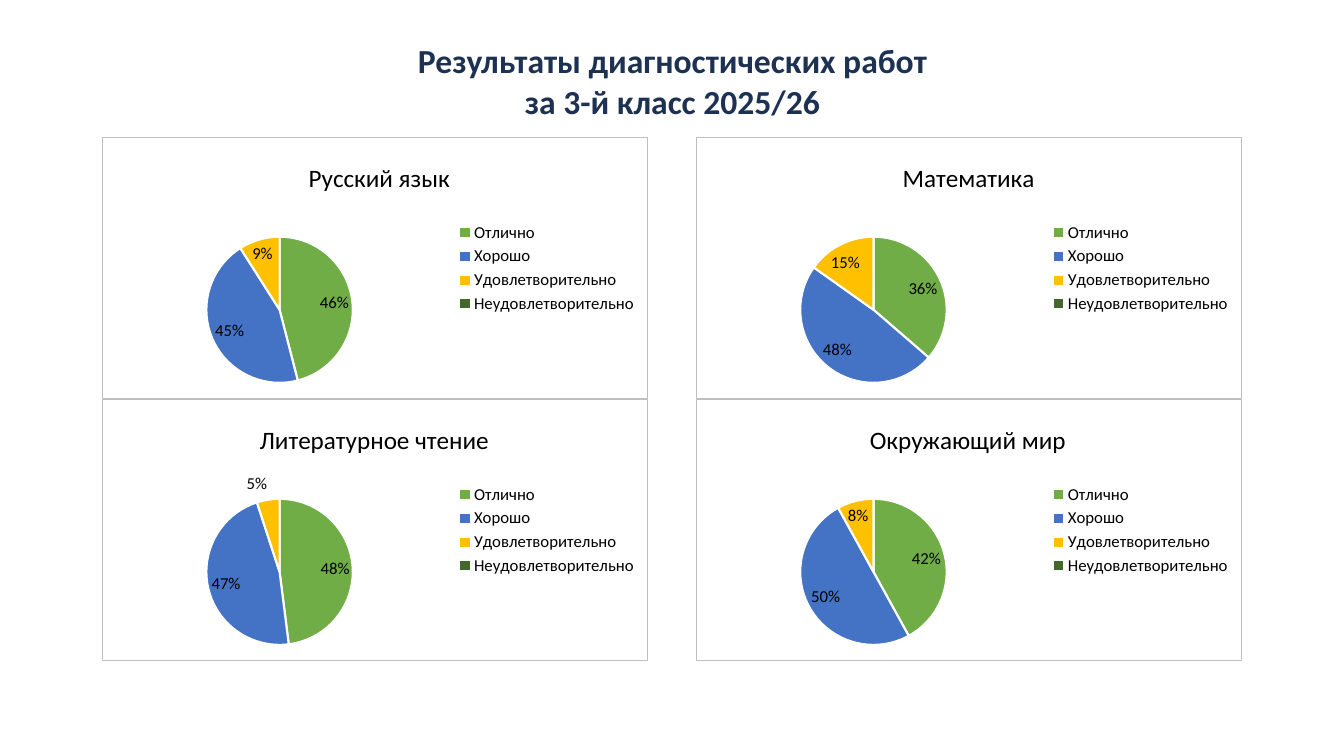
from dataclasses import dataclass

from lxml.etree import _Element
from pptx import Presentation
from pptx.chart.data import CategoryChartData
from pptx.dml.color import RGBColor
from pptx.enum.chart import XL_CHART_TYPE, XL_LABEL_POSITION, XL_LEGEND_POSITION
from pptx.enum.text import MSO_AUTO_SIZE, PP_ALIGN
from pptx.oxml import parse_xml
from pptx.oxml.ns import nsdecls, qn
from pptx.slide import Slide
from pptx.util import Inches, Pt


@dataclass(frozen=True)
class Theme:
    font: str = "Calibri"
    heading: str = "1D3152"
    text: str = "000000"
    border: str = "BFBFBF"
    white: str = "FFFFFF"
    grades: tuple[str, ...] = ("70AD47", "4472C4", "FFC000", "43682B")
    heading_size: int = 24
    title_size: int = 18
    label_size: int = 12
    base_size: int = 10


@dataclass(frozen=True)
class Subject:
    name: str
    title_x: float
    shares: tuple[int, ...]


THEME = Theme()
HEADING = ("Результаты диагностических работ", "за 3-й класс 2025/26")
GRADES = ("Отлично", "Хорошо", "Удовлетворительно", "Неудовлетворительно")
SUBJECTS = (
    Subject("Русский язык", 0.37, (46, 45, 9, 0)),
    Subject("Математика", 0.37, (36, 48, 15, 0)),
    Subject("Литературное чтение", 0.28, (48, 47, 5, 0)),
    Subject("Окружающий мир", 0.31, (42, 50, 8, 0)),
)
LEFT, TOP, WIDTH, HEIGHT, COLUMN_STEP = 1.01, 1.36, 5.42, 2.6, 5.89


def style(font, size: int, color: str, bold: bool = False) -> None:
    font.name = THEME.font
    font.size = Pt(size)
    font.bold = bold
    font.color.rgb = RGBColor.from_string(color)


def set_layout(parent: _Element, index: int, **fractions: float) -> None:
    for old in parent.findall(qn("c:layout")):
        parent.remove(old)
    target = '<c:layoutTarget val="inner"/>' if "w" in fractions else ""
    modes = '<c:xMode val="edge"/><c:yMode val="edge"/>'
    values = "".join(f'<c:{k} val="{v}"/>' for k, v in fractions.items())
    parent.insert(index, parse_xml(
        f'<c:layout {nsdecls("c")}><c:manualLayout>{target}{modes}{values}'
        "</c:manualLayout></c:layout>"))


def add_heading(s: Slide) -> None:
    tf = s.shapes.add_textbox(
        Inches(2.92), Inches(0.35), Inches(7.5), Inches(0.91)).text_frame
    tf.word_wrap = True
    tf.auto_size = MSO_AUTO_SIZE.SHAPE_TO_FIT_TEXT
    for i, line in enumerate(HEADING):
        p = tf.paragraphs[0] if i == 0 else tf.add_paragraph()
        p.alignment = PP_ALIGN.CENTER
        r = p.add_run()
        r.text = line
        style(r.font, THEME.heading_size, THEME.heading, True)


def add_pie(s: Slide, subject: Subject, left: float, top: float) -> None:
    data = CategoryChartData()
    data.categories = GRADES
    data.add_series("Series 1", subject.shares)
    chart = s.shapes.add_chart(
        XL_CHART_TYPE.PIE, Inches(left), Inches(top),
        Inches(WIDTH), Inches(HEIGHT), data).chart
    style(chart.font, THEME.base_size, THEME.text)

    chart.has_title = True
    title = chart.chart_title
    r = title.text_frame.paragraphs[0].add_run()
    r.text = subject.name
    style(r.font, THEME.title_size, THEME.text)
    title.include_in_layout = False

    chart.has_legend = True
    chart.legend.position = XL_LEGEND_POSITION.RIGHT
    chart.legend.include_in_layout = False
    style(chart.legend.font, THEME.label_size, THEME.text)

    plot = chart.plots[0]
    plot.vary_by_categories = True
    for i, color in enumerate(THEME.grades):
        fmt = plot.series[0].points[i].format
        fmt.fill.solid()
        fmt.fill.fore_color.rgb = RGBColor.from_string(color)
        fmt.line.color.rgb = RGBColor.from_string(THEME.white)
        fmt.line.width = Pt(1.5)

    plot.has_data_labels = True
    labels = plot.data_labels
    labels.show_value = False
    labels.show_percentage = True
    labels.number_format = "0%"
    labels.number_format_is_linked = False
    labels.position = XL_LABEL_POSITION.BEST_FIT
    style(labels.font, THEME.label_size, THEME.text)

    root = chart.element.find(qn("c:chart"))
    set_layout(root.find(qn("c:title")), 1, x=subject.title_x, y=0.07)
    set_layout(root.find(qn("c:plotArea")), 0, x=0.19, y=0.38, w=0.27, h=0.56)
    root.addnext(parse_xml(
        f'<c:spPr {nsdecls("c", "a")}><a:solidFill><a:srgbClr val="{THEME.white}"/>'
        f'</a:solidFill><a:ln w="{Pt(0.75)}"><a:solidFill>'
        f'<a:srgbClr val="{THEME.border}"/></a:solidFill></a:ln></c:spPr>'))


def main() -> None:
    prs = Presentation()
    prs.slide_width, prs.slide_height = Inches(13.33), Inches(7.5)
    s = prs.slides.add_slide(prs.slide_layouts[6])
    add_heading(s)
    for i, subject in enumerate(SUBJECTS):
        row, column = divmod(i, 2)
        add_pie(s, subject, LEFT + column * COLUMN_STEP, TOP + row * HEIGHT)
    prs.save("out.pptx")


if __name__ == "__main__":
    main()
